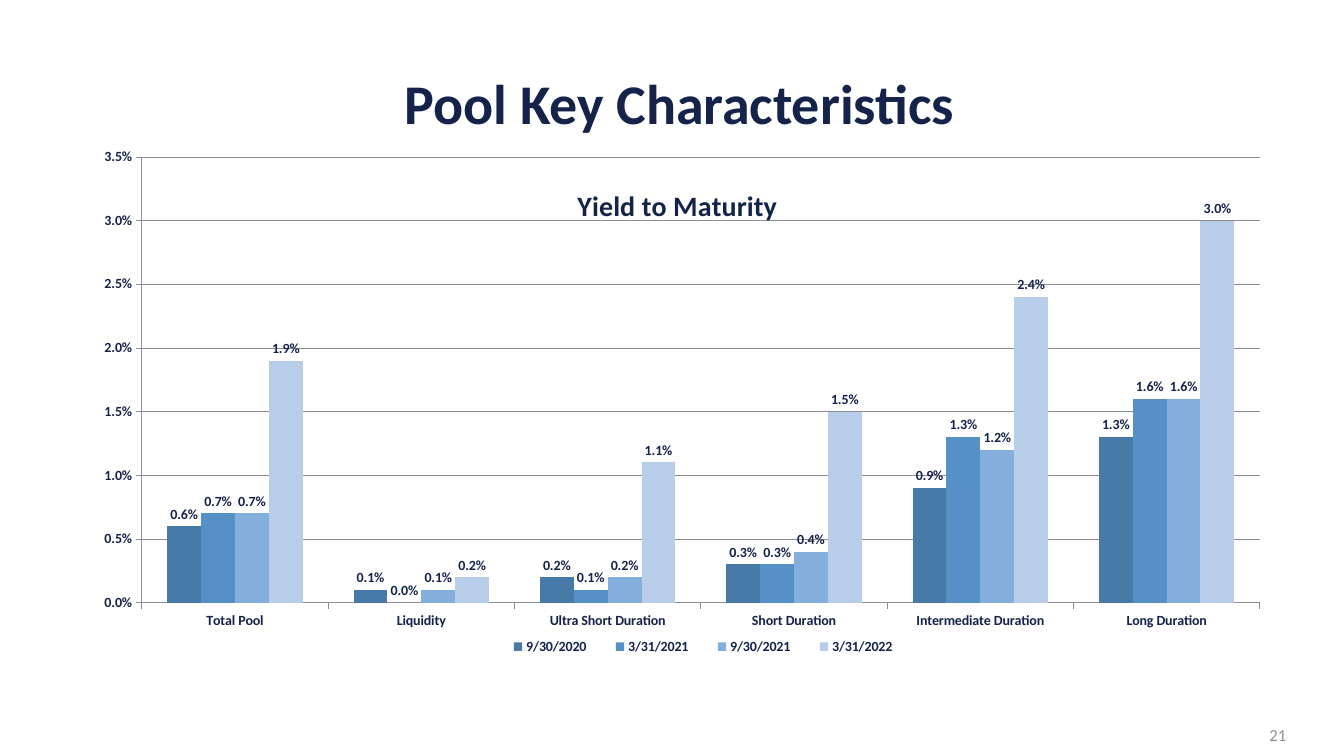
import pptx
import pptx.chart.data
import pptx.dml.color
import pptx.enum.chart
import pptx.enum.text
import pptx.oxml
import pptx.oxml.ns
import pptx.util

Pt = pptx.util.Pt
RGB = pptx.dml.color.RGBColor.from_string
align = pptx.enum.text.PP_ALIGN
kinds = pptx.enum.chart

FACE = "Calibri"
COLORS = {
    "navy": "15234A",
    "gray": "8C8D96",
    "9/30/2020": "487AA8",
    "3/31/2021": "5591C7",
    "9/30/2021": "84AEDC",
    "3/31/2022": "B8CDE8",
}
GROUPS = ["Total Pool", "Liquidity", "Ultra Short Duration",
          "Short Duration", "Intermediate Duration", "Long Duration"]
YIELDS = {
    "9/30/2020": [0.006, 0.001, 0.002, 0.003, 0.009, 0.013],
    "3/31/2021": [0.007, 0, 0.001, 0.003, 0.013, 0.016],
    "9/30/2021": [0.007, 0.001, 0.002, 0.004, 0.012, 0.016],
    "3/31/2022": [0.019, 0.002, 0.011, 0.015, 0.024, 0.03],
}


def style(font, size, color, bold):
    font.name = FACE
    font.size = Pt(size)
    font.bold = bold
    font.color.rgb = RGB(COLORS[color])


def place(node, index, inner=False, **box):
    """Fix a chart part at fractions of the chart's size."""
    for old in node.findall(pptx.oxml.ns.qn("c:layout")):
        node.remove(old)
    rows = '<c:layoutTarget val="inner"/>' if inner else ""
    rows += "".join(f'<c:{key}Mode val="edge"/>' for key in box if key in "xy")
    rows += "".join(f'<c:{key} val="{val}"/>' for key, val in box.items())
    node.insert(index, pptx.oxml.parse_xml(
        f'<c:layout {pptx.oxml.ns.nsdecls("c")}>'
        f"<c:manualLayout>{rows}</c:manualLayout></c:layout>"))


deck = pptx.Presentation()
deck.slide_width = Pt(960)
deck.slide_height = Pt(540)
slide = deck.slides.add_slide(deck.slide_layouts[6])

# Chart
data = pptx.chart.data.CategoryChartData(number_format="0.0%")
data.categories = GROUPS
for date, vals in YIELDS.items():
    data.add_series(date, vals)
chart = slide.shapes.add_chart(
    kinds.XL_CHART_TYPE.COLUMN_CLUSTERED,
    Pt(60.5), Pt(90), Pt(849.6), Pt(387.4), data).chart
style(chart.font, 10, "navy", True)

chart.has_title = True
head = chart.chart_title
head.text_frame.text = "Yield to Maturity"
style(head.text_frame.paragraphs[0].font, 20, "navy", True)
head.include_in_layout = False
place(head._element, 1, x=0.41, y=0.1)

chart.has_legend = True
legend = chart.legend
legend.position = kinds.XL_LEGEND_POSITION.BOTTOM
legend.include_in_layout = False
style(legend.font, 10, "navy", True)
place(legend._element, 1, x=0.34, y=0.93, w=0.36, h=0.06)

plot = chart.plots[0]
plot.gap_width = 150
plot.overlap = 0
plot.vary_by_categories = False
place(chart._chartSpace.chart.plotArea, 0, True,
      x=0.048, y=0.057, w=0.94, h=0.822)

for series in plot.series:
    series.format.fill.solid()
    series.format.fill.fore_color.rgb = RGB(COLORS[series.name])
    labels = series.data_labels
    labels.show_value = True
    labels.number_format = "0.0%"
    labels.number_format_is_linked = False
    labels.position = kinds.XL_LABEL_POSITION.OUTSIDE_END
    style(labels.font, 10, "navy", True)

scale = chart.value_axis
scale.minimum_scale = 0
scale.maximum_scale = 0.035
scale.major_unit = 0.005
scale.has_major_gridlines = True
scale.tick_labels.number_format = "0.0%"
scale.tick_labels.number_format_is_linked = False
for axis in (scale, chart.category_axis):
    axis.major_tick_mark = kinds.XL_TICK_MARK.OUTSIDE
    style(axis.tick_labels.font, 10, "navy", True)
for part in (scale, chart.category_axis, scale.major_gridlines):
    part.format.line.color.rgb = RGB(COLORS["gray"])
    part.format.line.width = Pt(0.5)

# Title and page number
for text, box, size, color, bold, side in (
    ("Pool Key Characteristics", (71.3, 49.7, 828, 52.6),
     40, "navy", True, align.CENTER),
    ("21", (710, 510.5, 216, 28.8), 12, "gray", False, align.RIGHT),
):
    frame = slide.shapes.add_textbox(*map(Pt, box)).text_frame
    frame.word_wrap = True
    frame.vertical_anchor = pptx.enum.text.MSO_ANCHOR.MIDDLE
    line = frame.paragraphs[0]
    line.text = text
    line.alignment = side
    line.line_spacing = 0.9 if bold else 1
    style(line.font, size, color, bold)

deck.save("out.pptx")
